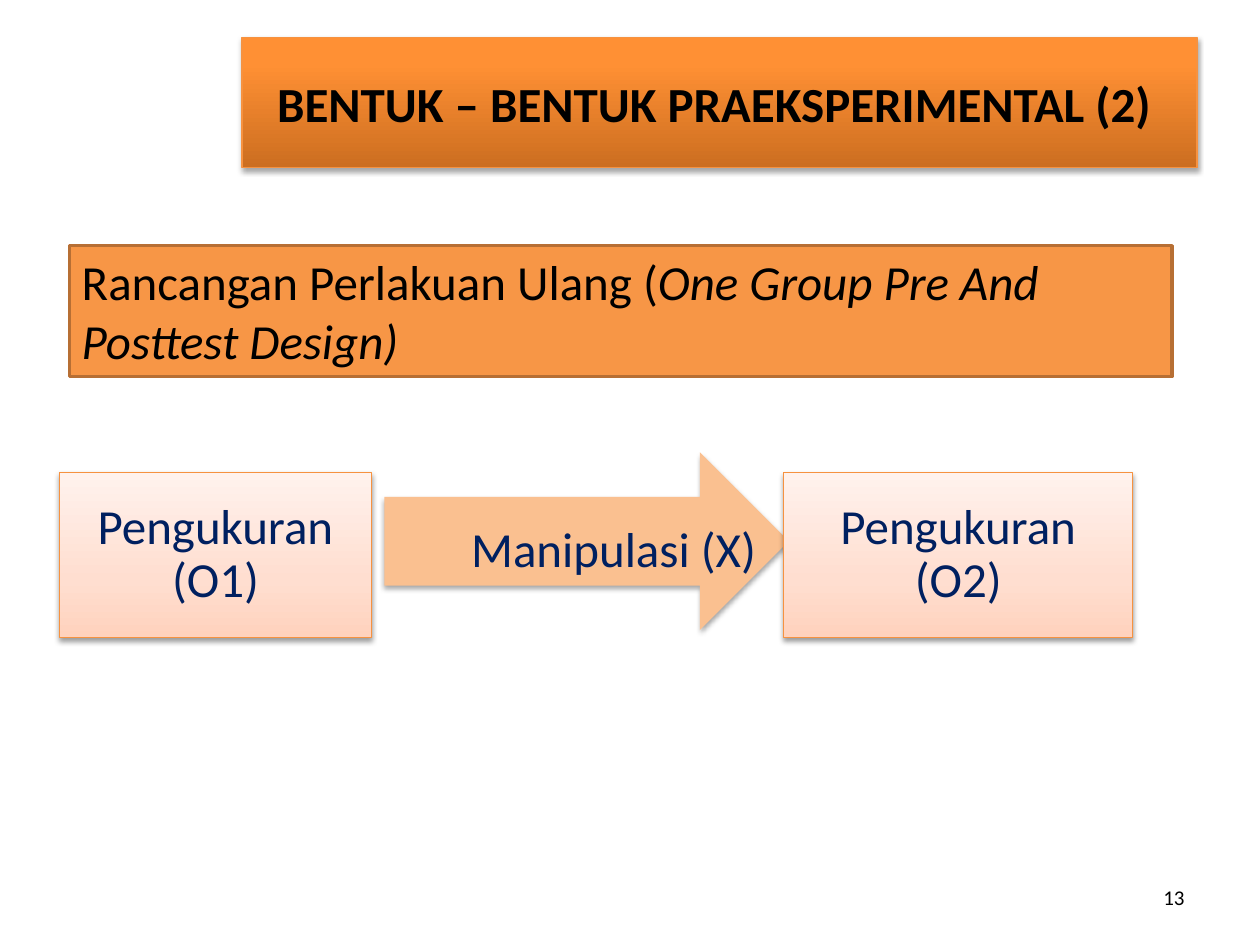
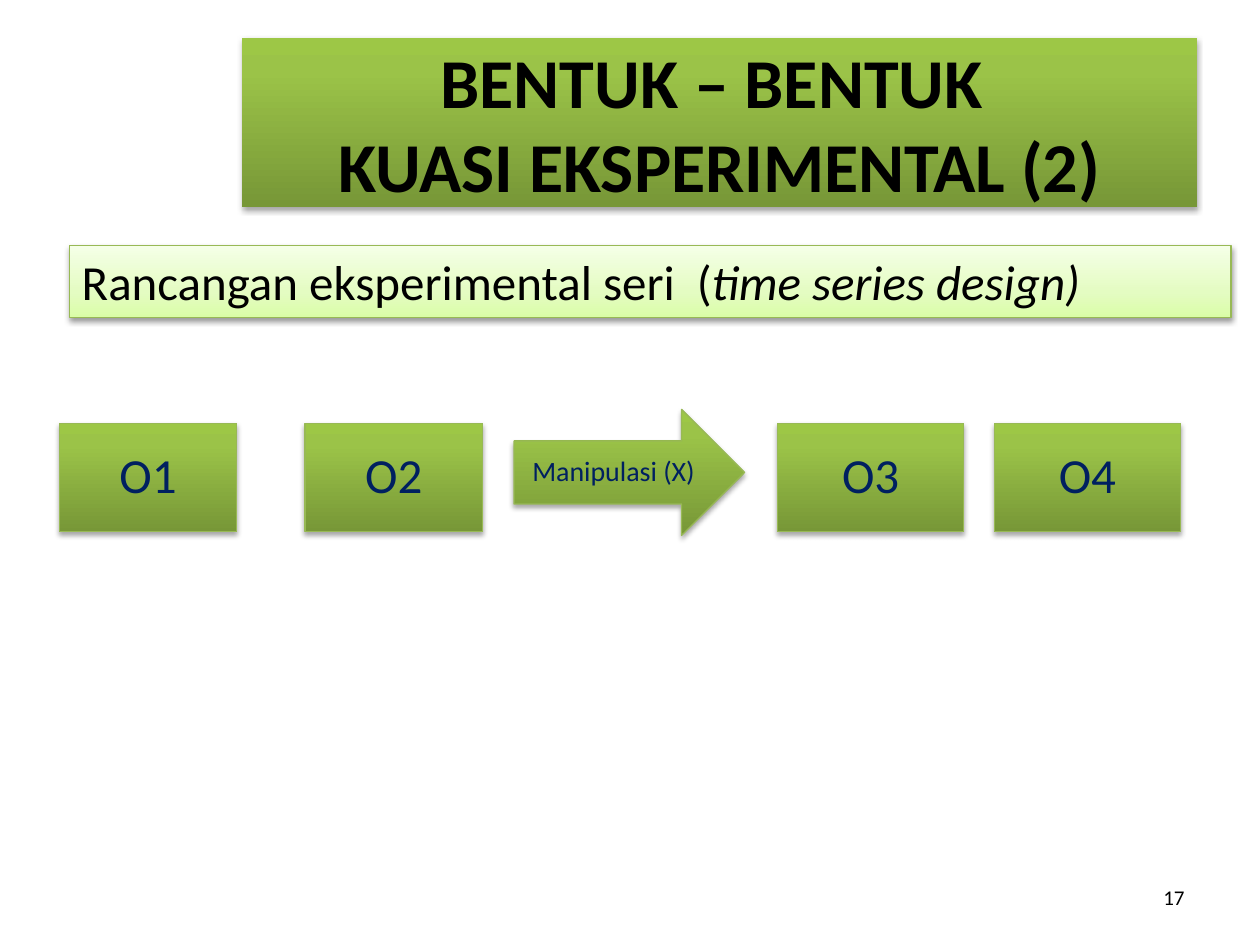
from dataclasses import dataclass

from lxml.etree import SubElement
from pptx import Presentation
from pptx.dml.color import RGBColor
from pptx.enum.shapes import MSO_SHAPE
from pptx.enum.text import MSO_ANCHOR, MSO_AUTO_SIZE, PP_ALIGN
from pptx.oxml.ns import qn
from pptx.util import Inches, Pt


@dataclass(frozen=True)
class Look:
    """Fill (one colour or gradient stops from the bottom up), outline and shadow."""
    fill: object
    line: str = ""
    line_width: float = 0.75
    shadow: tuple = ()  # opacity in percent, distance in points


@dataclass(frozen=True)
class Theme:
    font: str = "Calibri"
    ink: str = "000000"
    label: str = "002060"
    body_size: int = 28
    large_title_size: int = 40
    arrow_size: int = 16
    number_size: int = 12
    strong_shadow: tuple = (35, 1.8)
    soft_shadow: tuple = (38, 1.6)
    shadow_blur: float = 3.1


THEME = Theme()

ORANGE = Look(((0, "CC6E20"), (80, "FF9034"), (100, "FF9136")), "F69240", shadow=THEME.strong_shadow)
ORANGE_BAND = Look("F79646", "B76F34", 2)
ORANGE_ARROW = Look("FAC090", shadow=THEME.strong_shadow)
PEACH = Look(((0, "FFD2BD"), (35, "FFDED0"), (100, "FFF2ED")), "F69240", shadow=THEME.soft_shadow)

GREEN_STOPS = ((0, "779737"), (80, "9BC348"), (100, "9DC746"))
GREEN_TITLE = Look(GREEN_STOPS, shadow=THEME.strong_shadow)
GREEN = Look(GREEN_STOPS, "98B955", shadow=THEME.strong_shadow)
GREEN_BAND = Look(((0, "DAFDA7"), (35, "E4FCC2"), (100, "F5FFE7")), "98B955", shadow=THEME.soft_shadow)


# Shared styling
def paint_gradient(fill, stops):
    fill.gradient()
    fill.gradient_angle = 90
    stop_list = fill._fill._gradFill.find(qn("a:gsLst"))
    for old_stop in list(stop_list):
        stop_list.remove(old_stop)
    for position, colour in stops:
        stop = SubElement(stop_list, qn("a:gs"), pos=str(position * 1000))
        SubElement(stop, qn("a:srgbClr"), val=colour)


def add_shadow(shape, opacity, distance):
    effects = shape._element.spPr.find(qn("a:effectLst"))
    shadow = SubElement(effects, qn("a:outerShdw"), blurRad=str(Pt(THEME.shadow_blur)),
                        dist=str(Pt(distance)), dir="5400000", rotWithShape="0")
    colour = SubElement(shadow, qn("a:srgbClr"), val="000000")
    SubElement(colour, qn("a:alpha"), val=str(opacity * 1000))


def apply_look(shape, look):
    if isinstance(look.fill, str):
        shape.fill.solid()
        shape.fill.fore_color.rgb = RGBColor.from_string(look.fill)
    else:
        paint_gradient(shape.fill, look.fill)
    if look.line:
        shape.line.color.rgb = RGBColor.from_string(look.line)
        shape.line.width = Pt(look.line_width)
    else:
        shape.line.fill.background()
    shape.shadow.inherit = False
    if look.shadow:
        add_shadow(shape, *look.shadow)


def format_text(shape, size, colour=THEME.ink, align=PP_ALIGN.CENTER, anchor=MSO_ANCHOR.MIDDLE, bold=False):
    frame = shape.text_frame
    frame.word_wrap = True
    frame.auto_size = MSO_AUTO_SIZE.NONE
    frame.vertical_anchor = anchor
    for paragraph in frame.paragraphs:
        paragraph.alignment = align
        for run in paragraph.runs:
            run.font.name = THEME.font
            run.font.size = Pt(size)
            run.font.bold = bold
            run.font.color.rgb = RGBColor.from_string(colour)


def format_label(shape, text, size, inset):
    frame = shape.text_frame
    frame.text = text
    frame.margin_left = frame.margin_right = Inches(inset)
    frame.margin_top = frame.margin_bottom = Inches(inset)
    frame.paragraphs[0].line_spacing = 0.9
    format_text(shape, size, THEME.label)


def inches(box):
    return [Inches(length) for length in box]


# Parts of a slide
def set_title(slide, text, height, size, look):
    title = slide.shapes.title
    title.left, title.top, title.width, title.height = inches((1.92, 0.3, 7.58, height))
    title.text_frame.text = text
    format_text(title, size, bold=True)
    apply_look(title, look)


def add_page_number(slide, number):
    box = slide.shapes.add_textbox(*inches((7.92, 6.92, 1.58, 0.4)))
    box.text_frame.text = str(number)
    format_text(box, THEME.number_size, align=PP_ALIGN.RIGHT)


def add_design_band(slide, width, height, name, english_name, look):
    band = slide.shapes.add_shape(MSO_SHAPE.RECTANGLE, *inches((0.55, 1.95, width, height)))
    paragraph = band.text_frame.paragraphs[0]
    paragraph.add_run().text = name
    paragraph.add_run().text = english_name
    format_text(band, THEME.body_size, align=PP_ALIGN.LEFT, anchor=MSO_ANCHOR.TOP)
    paragraph.runs[1].font.italic = True
    apply_look(band, look)


def add_measurement(slide, box, text, look):
    shape = slide.shapes.add_shape(MSO_SHAPE.RECTANGLE, *inches(box))
    format_label(shape, text, THEME.body_size, 0.15)
    apply_look(shape, look)


def add_manipulation(slide, arrow_box, label_offset, label_size, font_size, inset, look):
    """Arrow with a label whose offset is taken from the arrow's corner."""
    group = slide.shapes.add_group_shape()
    arrow = group.shapes.add_shape(MSO_SHAPE.RIGHT_ARROW, *inches(arrow_box))
    apply_look(arrow, look)
    corner = [start + shift for start, shift in zip(arrow_box, label_offset)]
    label = group.shapes.add_textbox(*inches((*corner, *label_size)))
    format_label(label, "Manipulasi (X)", font_size, inset)


# Slides
def add_title_slide(presentation, number):
    slide = presentation.slides.add_slide(presentation.slide_layouts[5])
    add_page_number(slide, number)
    return slide


def build_pretest_posttest(presentation):
    slide = add_title_slide(presentation, 13)
    set_title(slide, "BENTUK – BENTUK PRAEKSPERIMENTAL (2) ", 1.03, THEME.body_size, ORANGE)
    add_design_band(slide, 8.75, 1.04, "Rancangan Perlakuan Ulang (",
                    "One Group Pre And Posttest Design)", ORANGE_BAND)
    add_manipulation(slide, (3.05, 3.59, 3.21, 1.41), (0.07, 0.32), (3.5, 0.93),
                     THEME.body_size, 0.16, ORANGE_ARROW)
    for index, (left, width) in enumerate(((0.47, 2.48), (6.22, 2.77)), start=1):
        add_measurement(slide, (left, 3.75, width, 1.31), f"Pengukuran (O{index})", PEACH)


def build_time_series(presentation):
    slide = add_title_slide(presentation, 17)
    set_title(slide, "BENTUK – BENTUK \vKUASI EKSPERIMENTAL (2)", 1.34,
              THEME.large_title_size, GREEN_TITLE)
    add_design_band(slide, 9.22, 0.57, "Rancangan eksperimental seri  (",
                    "time series design)", GREEN_BAND)
    columns = ((0.47, 1.41), (2.42, 1.41), (6.17, 1.48), (7.89, 1.48))
    for index, (left, width) in enumerate(columns, start=1):
        add_measurement(slide, (left, 3.36, width, 0.86), f"O{index}", GREEN)
    add_manipulation(slide, (4.08, 3.25, 1.83, 1), (0, 0.25), (1.58, 0.5),
                     THEME.arrow_size, 0.07, GREEN)


def main():
    presentation = Presentation()
    presentation.slide_width = Inches(10)
    presentation.slide_height = Inches(7.5)
    build_pretest_posttest(presentation)
    build_time_series(presentation)
    presentation.save("out.pptx")


if __name__ == "__main__":
    main()
